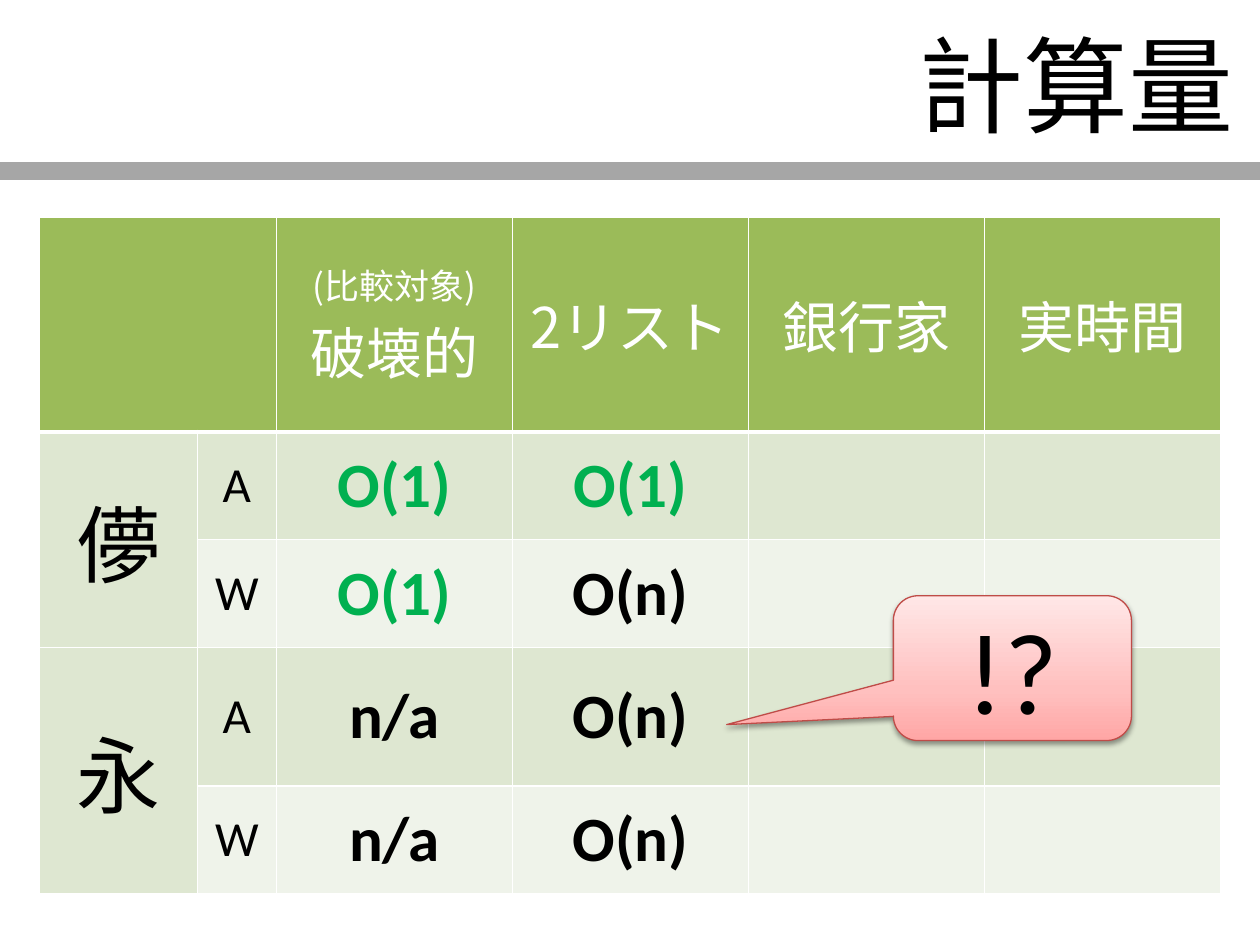
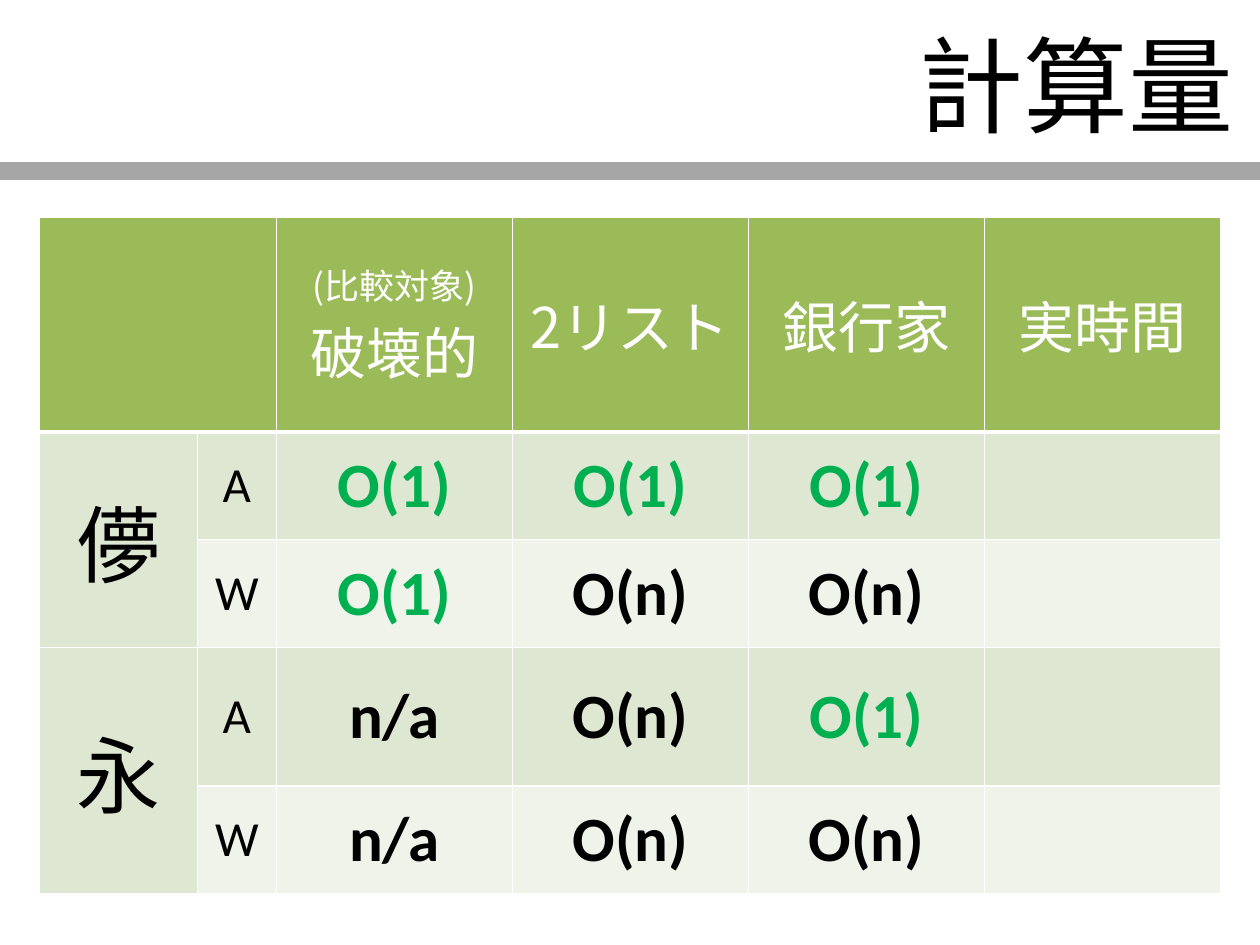
"""Build two slides that compare the complexity of queue implementations."""
import copy

import lxml.etree
import pptx
import pptx.dml.color
import pptx.enum.shapes
import pptx.enum.text
import pptx.oxml
import pptx.oxml.ns
import pptx.util

Cm = pptx.util.Cm
Pt = pptx.util.Pt
qn = pptx.oxml.ns.qn
JAPANESE = "Noto Sans CJK JP"
LATIN = "Calibri"
WHITE, BLACK, GREEN, GREY = "FFFFFF", "000000", "00B050", "A6A6A6"
HEADER_FILL, BAND_FILLS = "9BBB59", ("EFF3EA", "DEE7D1")

STYLES = {
    "title": ({"size": Pt(60), "name": LATIN, "bold": False}, BLACK),
    "note": ({"size": Pt(20), "name": JAPANESE, "bold": False}, WHITE),
    "header": ({"size": Pt(32), "name": JAPANESE, "bold": False}, WHITE),
    "group": ({"size": Pt(48), "name": JAPANESE, "bold": False}, BLACK),
    "case": ({"size": Pt(28), "name": LATIN, "bold": False}, BLACK),
    "cost": ({"size": Pt(36), "name": LATIN, "bold": True}, BLACK),
    "fast": ({"size": Pt(36), "name": LATIN, "bold": True}, GREEN),
    "callout": ({"size": Pt(66), "name": LATIN, "bold": False}, BLACK),
}
COLUMN_WIDTHS = [3.18, 1.59] + [4.76] * 4
ROW_HEIGHTS = [4.34, 2.17, 2.17, 2.79, 2.17]
HEADERS = ["", "", "(比較対象)\n破壊的", "2リスト", "銀行家", "実時間"]
ROW_LABELS = [("儚", "A"), ("", "W"), ("永", "A"), ("", "W")]
DESTRUCTIVE = ["O(1)", "O(1)", "n/a", "n/a"]
TWO_LISTS = ["O(1)", "O(n)", "O(n)", "O(n)"]
BANKER = ["O(1)", "O(n)", "O(1)", "O(n)"]
UNKNOWN = [""] * 4
SLIDE_COSTS = [
    [DESTRUCTIVE, TWO_LISTS, UNKNOWN, UNKNOWN],
    [DESTRUCTIVE, TWO_LISTS, BANKER, UNKNOWN],
]
MERGES = [((0, 0), (0, 1)), ((1, 0), (2, 0)), ((3, 0), (4, 0))]


def paint(color, value):
    color.rgb = pptx.dml.color.RGBColor.from_string(value)


def write(frame, text, styles, align=pptx.enum.text.PP_ALIGN.CENTER):
    frame.word_wrap = True
    frame.vertical_anchor = pptx.enum.text.MSO_ANCHOR.MIDDLE
    for index, line in enumerate(text.split("\n")):
        para = frame.add_paragraph() if index else frame.paragraphs[0]
        para.alignment = align
        span = para.add_run()
        span.text = line
        values, color = STYLES[styles[index]]
        for name, value in values.items():
            setattr(span.font, name, value)
        paint(span.font.color, color)
        east_asian = lxml.etree.SubElement(span.font._element, qn("a:ea"))
        east_asian.set("typeface", JAPANESE)


deck = pptx.Presentation()
deck.slide_width, deck.slide_height = Cm(25.4), Cm(19.05)

for costs in SLIDE_COSTS:
    page = deck.slides.add_slide(deck.slide_layouts[5])

    rule = page.shapes.add_connector(
        pptx.enum.shapes.MSO_CONNECTOR.STRAIGHT, 0, Cm(3.45), deck.slide_width, Cm(3.45))
    rule.line.width = Pt(10)
    paint(rule.line.color, GREY)
    lxml.etree.SubElement(rule._element.spPr, qn("a:effectLst"))

    title = page.shapes.title
    title.left, title.top, title.width, title.height = Cm(2.26), Cm(0.1), Cm(22.86), Cm(3.18)
    title.text_frame.auto_size = pptx.enum.text.MSO_AUTO_SIZE.NONE
    write(title.text_frame, "計算量", ["title"], pptx.enum.text.PP_ALIGN.RIGHT)

    table = page.shapes.add_table(
        len(ROW_HEIGHTS), len(COLUMN_WIDTHS), Cm(0.8), Cm(4.37),
        Cm(sum(COLUMN_WIDTHS)), Cm(sum(ROW_HEIGHTS))).table
    for column, width in zip(table.columns, COLUMN_WIDTHS):
        column.width = Cm(width)
    for row, height in zip(table.rows, ROW_HEIGHTS):
        row.height = Cm(height)
    for first, last in MERGES:
        table.cell(*first).merge(table.cell(*last))

    body = [[*labels, *values] for labels, values in zip(ROW_LABELS, zip(*costs))]
    for row_index, texts in enumerate([HEADERS, *body]):
        for column_index, text in enumerate(texts):
            cell = table.cell(row_index, column_index)
            properties = cell._tc.get_or_add_tcPr()
            for side in "LRTB":
                heavy = (row_index, side) in ((0, "B"), (1, "T"))
                edge = lxml.etree.SubElement(
                    properties, qn(f"a:ln{side}"), w=str(Pt(3 if heavy else 1)))
                edge_fill = lxml.etree.SubElement(edge, qn("a:solidFill"))
                lxml.etree.SubElement(edge_fill, qn("a:srgbClr"), val=WHITE)
            cell.fill.solid()
            paint(cell.fill.fore_color, BAND_FILLS[row_index % 2] if row_index else HEADER_FILL)
            cell.vertical_anchor = pptx.enum.text.MSO_ANCHOR.MIDDLE
            if not text:
                continue
            if row_index == 0:
                styles = ["note", "header"] if "\n" in text else ["header"]
            elif column_index < 2:
                styles = [("group", "case")[column_index]]
            else:
                styles = ["fast" if text == "O(1)" else "cost"]
            write(cell.text_frame, text, styles)

page = deck.slides[0]
callout = page.shapes.add_shape(
    pptx.enum.shapes.MSO_SHAPE.ROUNDED_RECTANGULAR_CALLOUT,
    Cm(18.01), Cm(12.01), Cm(4.8), Cm(2.92))
for index, value in enumerate([-1.2, 0.39, 0.17]):
    callout.adjustments[index] = value
callout.fill.gradient()
callout.fill.gradient_angle = 90
stop_list = callout._element.spPr.find(".//" + qn("a:gsLst"))
stop_list.insert(1, copy.deepcopy(stop_list[0]))
for stop, (position, color) in zip(
        callout.fill.gradient_stops, [(0, "FFA6A5"), (0.35, "FFC0BF"), (1, "FFE7E7")]):
    stop.position = position
    paint(stop.color, color)
callout.line.width = Pt(0.75)
paint(callout.line.color, "BF4C48")
callout.shadow.inherit = False
effects = callout._element.spPr.find(qn("a:effectLst"))
shadow = lxml.etree.SubElement(
    effects, qn("a:outerShdw"), blurRad=str(Pt(3.1)), dist=str(Pt(1.6)),
    dir="5400000", rotWithShape="0")
shadow_color = lxml.etree.SubElement(shadow, qn("a:srgbClr"), val=BLACK)
lxml.etree.SubElement(shadow_color, qn("a:alpha"), val="38000")
write(callout.text_frame, "!?", ["callout"])

deck.save("out.pptx")
